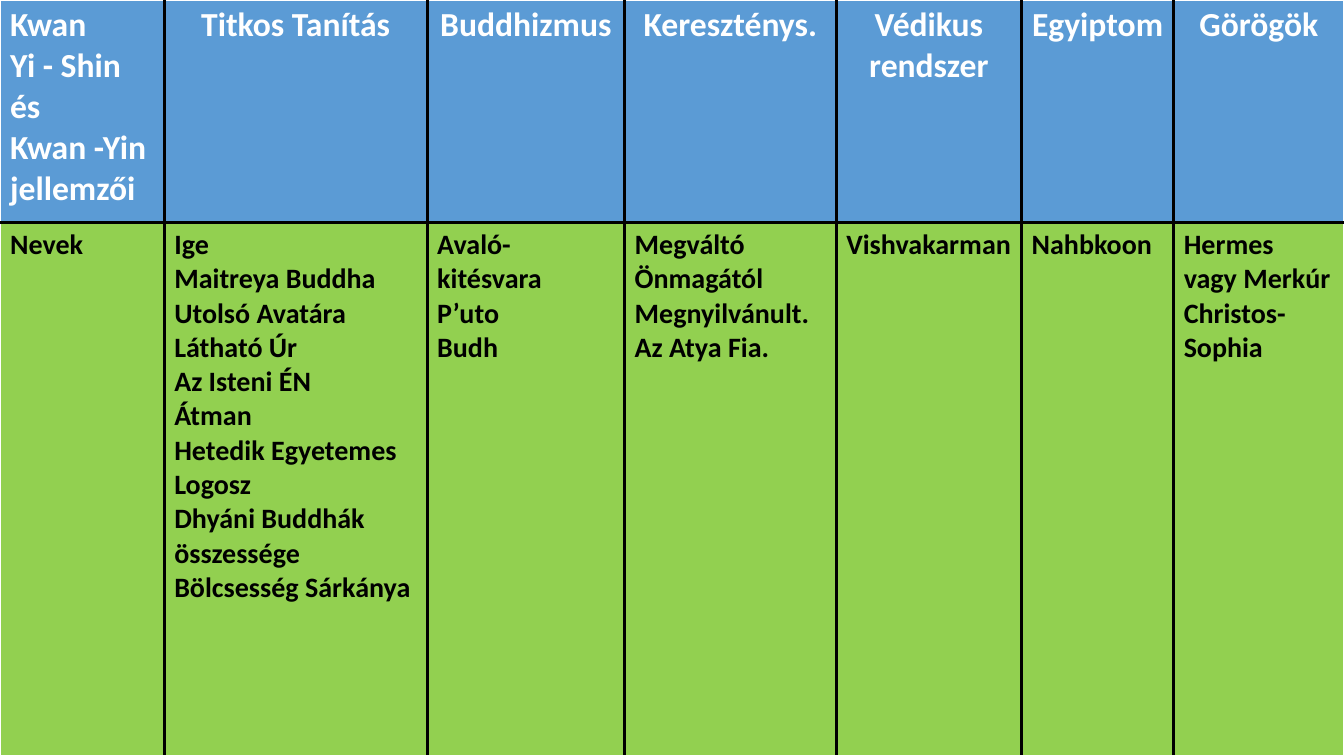
from lxml import etree
from pptx import Presentation
from pptx.dml.color import RGBColor
from pptx.enum.text import PP_ALIGN
from pptx.oxml.ns import qn
from pptx.util import Inches, Pt

CENTER, LEFT = PP_ALIGN.CENTER, PP_ALIGN.LEFT
COLORS = {
    "background": "D6F2FD",
    "header": "5B9BD5",
    "names": "92D050",
    "header_text": "FFFFFF",
    "names_text": "000000",
    "outer": "FFFFFF",
    "inner": "000000",
}
FONT = "Calibri"
SLIDE_WIDTH, SLIDE_HEIGHT = 13.33, 7.5
COLUMN_WIDTHS = [1.63, 2.61, 1.96, 2.1, 1.84, 1.51, 1.69]
ROW_HEIGHTS = [2.21, 5.29]
ROW_STYLES = [("header", 24), ("names", 20)]
TRADITIONS = [
    ["Kwan", "Yi - Shin", "és", "Kwan -Yin jellemzői"],
    ["Titkos Tanítás"],
    ["Buddhizmus"],
    ["Kereszténys."],
    ["Védikus rendszer"],
    ["Egyiptom"],
    ["Görögök"],
]
NAMES = [
    ["Nevek"],
    ["Ige", "Maitreya Buddha", "Utolsó Avatára", "Látható Úr", "Az Isteni ÉN",
     "Átman", "Hetedik Egyetemes", "Logosz", "Dhyáni Buddhák", "összessége",
     "Bölcsesség Sárkánya"],
    ["Avaló-kitésvara", "P’uto", "Budh"],
    ["Megváltó", "Önmagától Megnyilvánult.", "Az Atya Fia."],
    ["Vishvakarman"],
    ["Nahbkoon"],
    ["Hermes", "vagy Merkúr Christos-Sophia"],
]


def rgb(key):
    """Return the palette colour called key."""
    return RGBColor.from_string(COLORS[key])


def set_borders(cell, outer_sides):
    """Draw thin white lines on the outer sides and thick black ones inside."""
    properties = cell._tc.get_or_add_tcPr()
    for side, is_outer in outer_sides.items():
        color, width = ("outer", 1) if is_outer else ("inner", 2.25)
        line = etree.SubElement(properties, qn(f"a:ln{side}"), w=str(int(Pt(width))))
        fill = etree.SubElement(line, qn("a:solidFill"))
        etree.SubElement(fill, qn("a:srgbClr"), val=COLORS[color])


def fill_cell(cell, lines, style, size, alignment):
    """Write one paragraph per line on the fill of the given row style."""
    cell.fill.solid()
    cell.fill.fore_color.rgb = rgb(style)
    cell.text = "\n".join(lines)
    for paragraph in cell.text_frame.paragraphs:
        paragraph.alignment = alignment
        paragraph.font.name = FONT
        paragraph.font.size = Pt(size)
        paragraph.font.bold = True
        paragraph.font.color.rgb = rgb(f"{style}_text")


def add_names_table(slide, left, top, width, height):
    """Place the table of names by tradition in the given box."""
    content = [TRADITIONS, NAMES]
    last_row, last_column = len(content) - 1, len(COLUMN_WIDTHS) - 1
    names_table = slide.shapes.add_table(
        len(content), len(COLUMN_WIDTHS),
        Inches(left), Inches(top), Inches(width), Inches(height)).table
    for column, share in zip(names_table.columns, COLUMN_WIDTHS):
        column.width = Inches(share * width / sum(COLUMN_WIDTHS))
    for row, share in zip(names_table.rows, ROW_HEIGHTS):
        row.height = Inches(share * height / sum(ROW_HEIGHTS))
    for r, (entries, (style, size)) in enumerate(zip(content, ROW_STYLES)):
        for c, lines in enumerate(entries):
            cell = names_table.cell(r, c)
            set_borders(cell, {"L": c == 0, "R": c == last_column,
                               "T": r == 0, "B": r == last_row})
            alignment = CENTER if r == 0 and c > 0 else LEFT
            fill_cell(cell, lines, style, size, alignment)


def main():
    """Build and save the presentation."""
    presentation = Presentation()
    presentation.slide_width = Inches(SLIDE_WIDTH)
    presentation.slide_height = Inches(SLIDE_HEIGHT)
    slide = presentation.slides.add_slide(presentation.slide_layouts[6])
    slide.background.fill.solid()
    slide.background.fill.fore_color.rgb = rgb("background")
    add_names_table(slide, 0, 0, SLIDE_WIDTH, SLIDE_HEIGHT)
    presentation.save("out.pptx")


if __name__ == "__main__":
    main()
